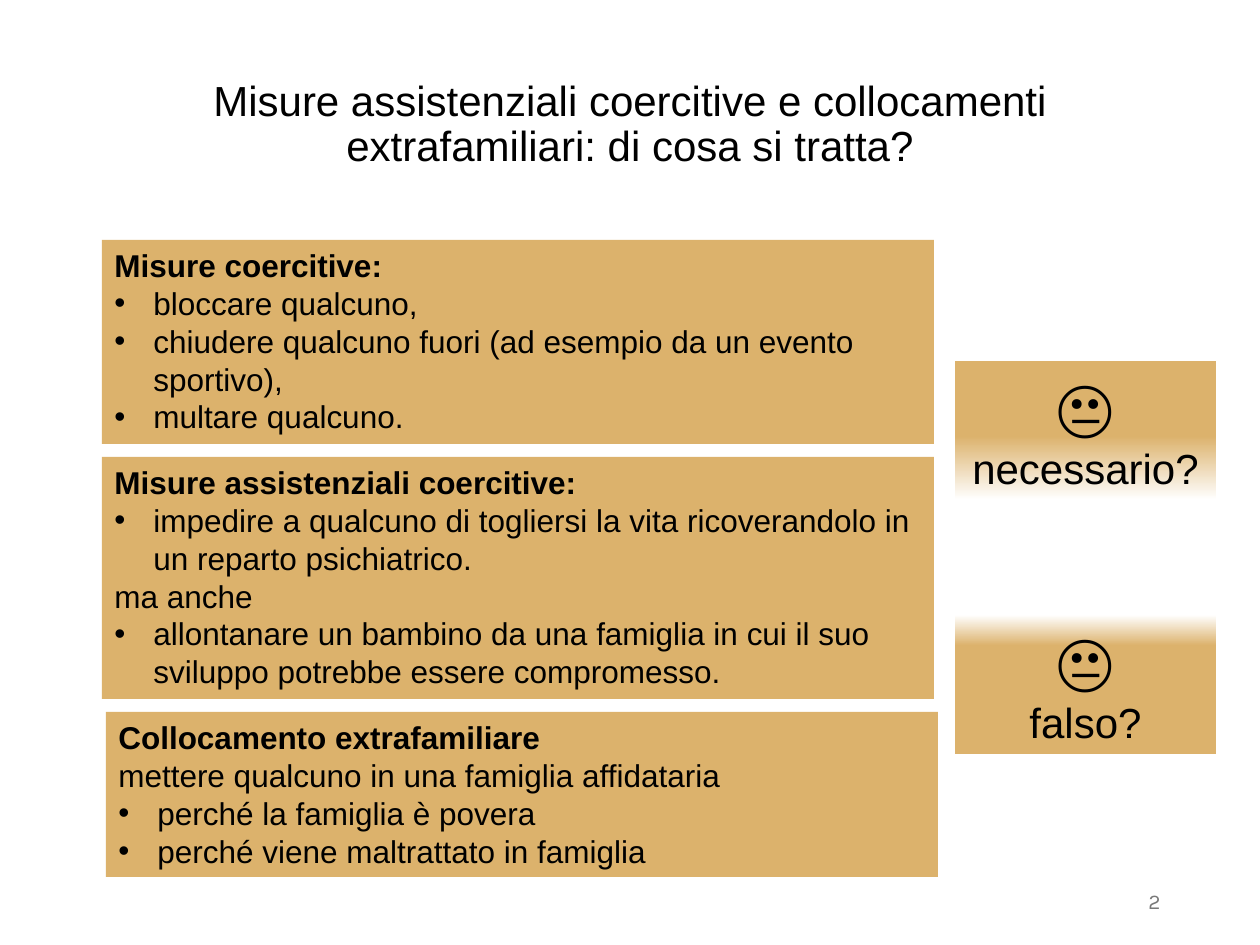
"""Build the slide on coercive welfare measures and placements."""
from copy import deepcopy

from lxml import etree
from pptx import Presentation
from pptx import util as u
from pptx.dml.color import RGBColor
from pptx.enum import shapes, text
from pptx.oxml.ns import qn

PX = 914400 / 126
BLACK = RGBColor(0x00, 0x00, 0x00)
GREY = RGBColor(0x79, 0x79, 0x79)
SAND = RGBColor(0xDC, 0xB2, 0x6C)
WHITE = RGBColor(0xFF, 0xFF, 0xFF)
LEFT, CENTER, RIGHT = text.PP_ALIGN.LEFT, text.PP_ALIGN.CENTER, text.PP_ALIGN.RIGHT
INDENT = 39


def px(*lengths):
    return [u.Emu(round(length * PX)) for length in lengths]


def write(paragraph, content, size=18, font="Arial", color=BLACK, bold=False, align=LEFT, bullet=False):
    paragraph.text = content
    paragraph.alignment = align
    for run in paragraph.runs:
        run.font.size = u.Pt(size)
        run.font.name = font
        run.font.bold = bold
        run.font.color.rgb = color
    if bullet:
        properties = paragraph._p.get_or_add_pPr()
        indent = px(INDENT)[0]
        properties.set("marL", str(indent))
        properties.set("indent", str(-indent))
        etree.SubElement(properties, qn("a:buFont")).set("typeface", "Arial")
        etree.SubElement(properties, qn("a:buChar")).set("char", "•")


presentation = Presentation()
presentation.slide_width, presentation.slide_height = px(1260, 945)
slide = presentation.slides.add_slide(presentation.slide_layouts[5])

title = slide.shapes.title
title.left, title.top, title.width, title.height = px(87, 50, 1086, 151)
title.text_frame.vertical_anchor = text.MSO_ANCHOR.MIDDLE
title.text_frame.auto_size = text.MSO_AUTO_SIZE.NONE
heading = title.text_frame.paragraphs[0]
heading.line_spacing = 0.9
write(heading, "Misure assistenziali coercitive e collocamenti\nextrafamiliari: di cosa si tratta?",
      size=24, align=CENTER)

TITLE_LINE, BULLET, PLAIN = {"bold": True}, {"bullet": True}, {}
FACE, QUESTION = {"size": 36, "align": CENTER}, {"size": 24, "align": CENTER}

boxes = [
    ((102, 240, 832, 204), [], [
        ("Misure coercitive:", TITLE_LINE),
        ("bloccare qualcuno,", BULLET),
        ("chiudere qualcuno fuori (ad esempio da un evento sportivo),", BULLET),
        ("multare qualcuno.", BULLET),
    ]),
    ((102, 457, 832, 242), [], [
        ("Misure assistenziali coercitive:", TITLE_LINE),
        ("impedire a qualcuno di togliersi la vita ricoverandolo in un reparto psichiatrico.", BULLET),
        ("ma anche", PLAIN),
        ("allontanare un bambino da una famiglia in cui il suo sviluppo potrebbe essere compromesso.", BULLET),
    ]),
    ((106, 712, 832, 165), [], [
        ("Collocamento extrafamiliare", TITLE_LINE),
        ("mettere qualcuno in una famiglia affidataria", PLAIN),
        ("perché la famiglia è povera", BULLET),
        ("perché viene maltrattato in famiglia", BULLET),
    ]),
    ((955, 361, 261, 139), [(0.01, SAND), (0.54, SAND), (1, WHITE)], [
        ("😐", FACE),
        ("necessario?", QUESTION),
    ]),
    ((955, 615, 261, 139), [(0, WHITE), (0.22, SAND), (1, SAND)], [
        ("😐", FACE),
        ("falso?", QUESTION),
    ]),
]

for place, stops, lines in boxes:
    box = slide.shapes.add_shape(shapes.MSO_SHAPE.RECTANGLE, *px(*place))
    box.shadow.inherit = False
    box.line.fill.background()
    if stops:
        box.fill.gradient()
        box.fill.gradient_angle = 270
        first = box._element.spPr.find(".//" + qn("a:gs"))
        first.addnext(deepcopy(first))
        for stop, (position, color) in zip(box.fill.gradient_stops, stops):
            stop.position = position
            stop.color.rgb = color
    else:
        box.fill.solid()
        box.fill.fore_color.rgb = SAND
    frame = box.text_frame
    frame.word_wrap = True
    frame.auto_size = text.MSO_AUTO_SIZE.SHAPE_TO_FIT_TEXT
    frame.vertical_anchor = text.MSO_ANCHOR.TOP
    for index, (content, style) in enumerate(lines):
        paragraph = frame.add_paragraph() if index else frame.paragraphs[0]
        write(paragraph, content, **style)

number = slide.shapes.add_textbox(*px(890, 876, 283, 50))
number.text_frame.word_wrap = True
number.text_frame.vertical_anchor = text.MSO_ANCHOR.MIDDLE
write(number.text_frame.paragraphs[0], "2", size=12, font="Karla", color=GREY, align=RIGHT)

presentation.save("out.pptx")
